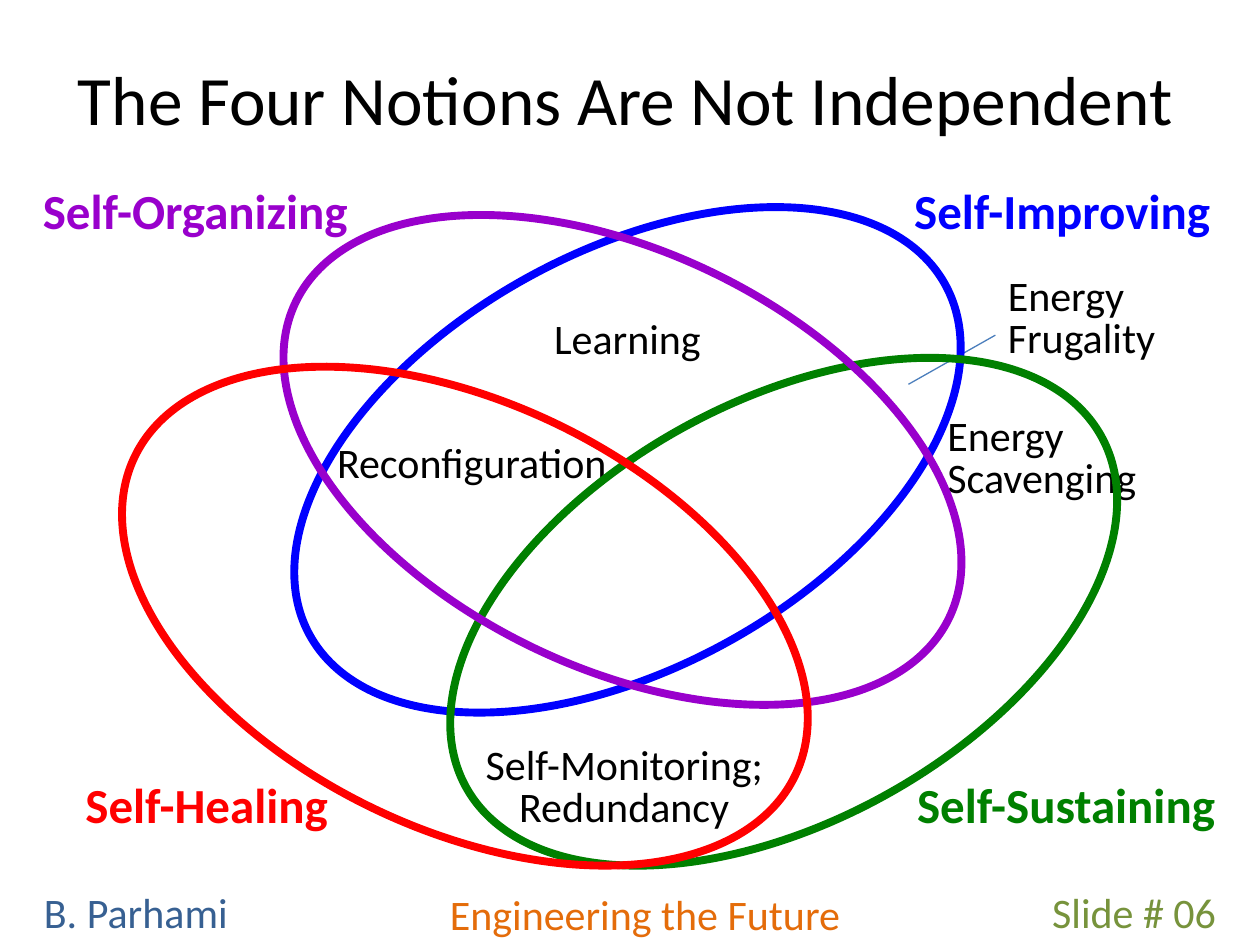
from dataclasses import dataclass

from lxml.etree import SubElement
from pptx import Presentation
from pptx.dml.color import RGBColor
from pptx.enum.shapes import MSO_CONNECTOR, MSO_SHAPE
from pptx.enum.text import MSO_ANCHOR, MSO_AUTO_SIZE, PP_ALIGN
from pptx.oxml.ns import qn
from pptx.util import Inches, Pt

PURPLE, BLUE, RED, GREEN, BLACK = "9900CC", "0000FF", "FF0000", "008000", "000000"
LEFT, CENTER, RIGHT = PP_ALIGN.LEFT, PP_ALIGN.CENTER, PP_ALIGN.RIGHT


@dataclass
class Label:
    lines: list[str]
    left: float
    top: float
    width: float
    height: float
    color: str = BLACK
    size: float = 24
    bold: bool = False
    align: PP_ALIGN = LEFT
    wrap: bool = True
    line_points: float | None = None
    anchor: MSO_ANCHOR = MSO_ANCHOR.TOP
    grow: bool = True


@dataclass
class Notion:
    left: float
    top: float
    width: float
    height: float
    rotation: float
    color: str


def color_from(hex_value: str) -> RGBColor:
    return RGBColor.from_string(hex_value)


def add_label(slide, label: Label) -> None:
    box = slide.shapes.add_textbox(
        Inches(label.left), Inches(label.top), Inches(label.width), Inches(label.height)
    )
    frame = box.text_frame
    frame_format = {
        "word_wrap": label.wrap,
        "vertical_anchor": label.anchor,
        "auto_size": MSO_AUTO_SIZE.SHAPE_TO_FIT_TEXT if label.grow else MSO_AUTO_SIZE.NONE,
    }
    for name, value in frame_format.items():
        setattr(frame, name, value)

    font_format = {"name": "Calibri", "size": Pt(label.size), "bold": label.bold}
    for index, line in enumerate(label.lines):
        paragraph = frame.paragraphs[0] if index == 0 else frame.add_paragraph()
        paragraph.alignment = label.align
        if label.line_points:
            paragraph.line_spacing = Pt(label.line_points)
        run = paragraph.add_run()
        run.text = line
        for name, value in font_format.items():
            setattr(run.font, name, value)
        run.font.color.rgb = color_from(label.color)


def add_notion(slide, notion: Notion) -> None:
    shape = slide.shapes.add_shape(
        MSO_SHAPE.OVAL,
        Inches(notion.left), Inches(notion.top), Inches(notion.width), Inches(notion.height),
    )
    shape.rotation = notion.rotation
    shape.shadow.inherit = False
    shape.fill.background()
    shape.line.color.rgb = color_from(notion.color)
    shape.line.width = Pt(4.5)


def add_pointer(slide, start: tuple[float, float], end: tuple[float, float]) -> None:
    connector = slide.shapes.add_connector(
        MSO_CONNECTOR.STRAIGHT, *(Inches(value) for value in start + end)
    )
    connector.line.color.rgb = color_from("4B7EBC")
    connector.line.width = Pt(0.75)
    SubElement(connector._element.spPr, qn("a:effectLst"))


TITLE = Label(["The Four Notions Are Not Independent"], 0.13, 0.18, 9.67, 1.2,
              size=39.6, align=CENTER, anchor=MSO_ANCHOR.MIDDLE, grow=False)

# Names of the four notions
HEADING = {"size": 28, "bold": True}
HEADINGS = [
    Label(["Self-Organizing"], 0.22, 1.38, 2.66, 0.57, PURPLE, align=CENTER, wrap=False, **HEADING),
    Label(["Self-Improving"], 7.08, 1.38, 2.7, 0.57, BLUE, align=CENTER, **HEADING),
    Label(["Self-Healing"], 0.58, 6.1, 2.16, 0.57, RED, wrap=False, **HEADING),
    Label(["Self-Sustaining"], 7.18, 6.1, 2.6, 0.57, GREEN, wrap=False, **HEADING),
]

# Concepts shared by overlapping notions
TIGHT = {"line_points": 24}
CONCEPTS = [
    Label(["Learning"], 4.29, 2.5, 1.38, 0.44, align=CENTER, wrap=False, **TIGHT),
    Label(["Self-Monitoring;", "Redundancy"], 3.49, 5.88, 2.93, 0.79, align=CENTER, **TIGHT),
    Label(["Energy", "Scavenging"], 7.42, 3.27, 1.72, 0.77, wrap=False, **TIGHT),
    Label(["Energy", "Frugality"], 7.9, 2.16, 1.38, 0.77, wrap=False, **TIGHT),
    Label(["Reconfiguration"], 2.51, 3.48, 2.47, 0.44, align=CENTER, **TIGHT),
]

FOOTER = [
    Label(["B. Parhami"], 0.25, 6.99, 2.08, 0.5, "376092"),
    Label(["Engineering the Future"], 2.33, 7, 5.58, 0.5, "E46C0A", align=CENTER),
    Label(["Slide # 06"], 7.92, 6.99, 1.83, 0.5, "77933C", align=RIGHT),
]

# Ellipses, from back to front
RISING, FALLING = 331.1, 205.8
NOTIONS = [
    Notion(2.1, 2, 5.76, 3.3, RISING, BLUE),
    Notion(3.34, 3.19, 5.76, 3.33, RISING, GREEN),
    Notion(2.06, 2, 5.76, 3.3, FALLING, PURPLE),
    Notion(0.78, 3.2, 5.82, 3.38, FALLING, RED),
]


def main() -> None:
    presentation = Presentation()
    presentation.slide_width = Inches(10)
    presentation.slide_height = Inches(7.5)
    slide = presentation.slides.add_slide(presentation.slide_layouts[6])

    for label in [TITLE, *HEADINGS, *FOOTER, *CONCEPTS]:
        add_label(slide, label)
    add_pointer(slide, (7.21, 3.05), (7.9, 2.66))
    for notion in NOTIONS:
        add_notion(slide, notion)

    presentation.save("out.pptx")


if __name__ == "__main__":
    main()
